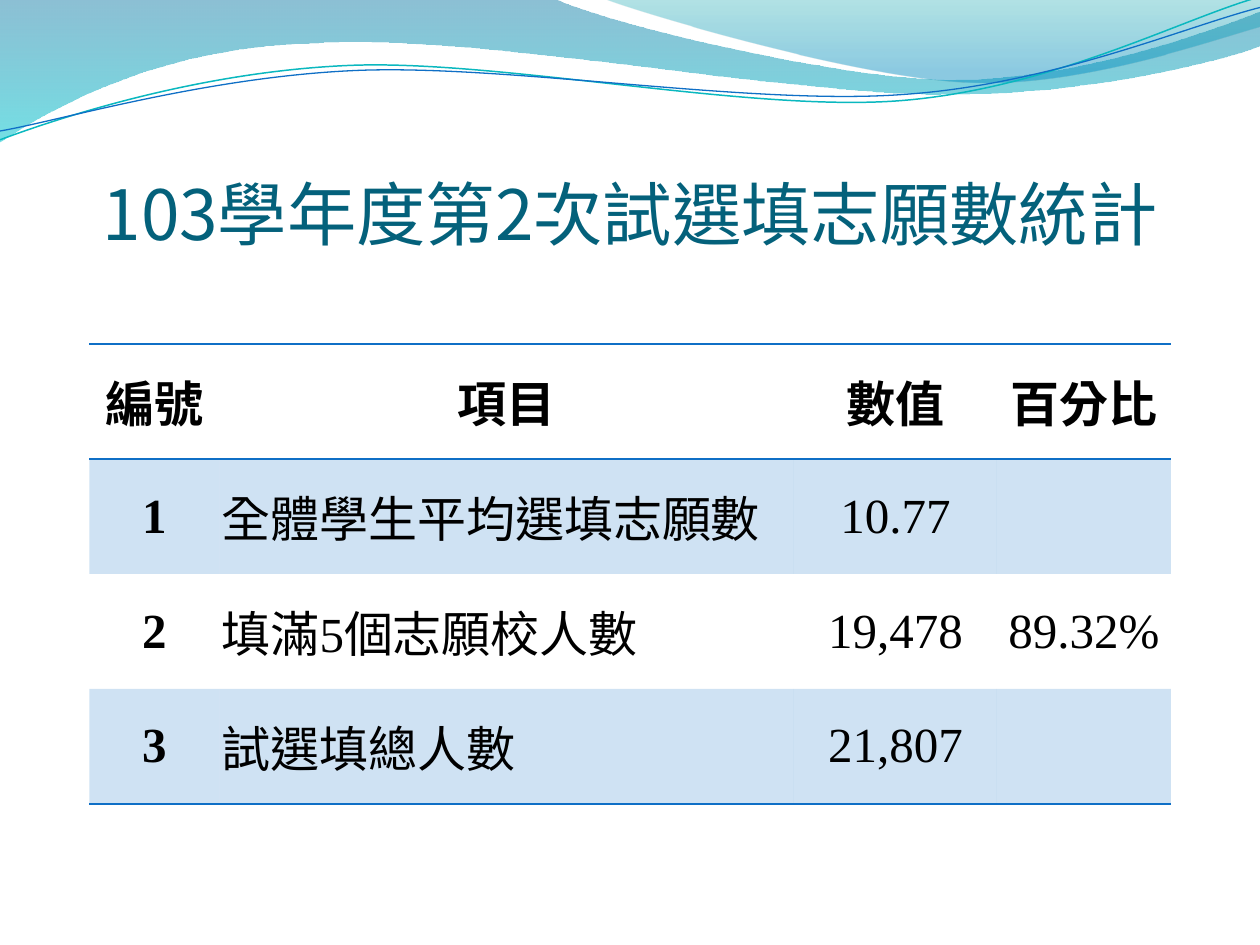
from math import cos, radians, sin

from pptx import Presentation
from pptx.dml.color import RGBColor
from pptx.enum.text import MSO_ANCHOR as Anchor, PP_ALIGN as Align
from pptx.oxml.ns import qn
from pptx.oxml.xmlchemy import OxmlElement as Element
from pptx.util import Pt

CJK = "Noto Sans CJK SC"
SERIF = "Times New Roman"
BLUE = "0F6FC6"
NO_STYLE = "{2D5ABB26-0587-4C30-8999-92F81FD0307C}"
STRAND_TILT = 357.3

ROWS = [
    ("編號", "項目", "數值", "百分比"),
    ("1", "全體學生平均選填志願數", "10.77", ""),
    ("2", "填滿5個志願校人數", "19,478", "89.32%"),
    ("3", "試選填總人數", "21,807", ""),
]
COLUMN_WIDTHS = (74.2, 328.4, 116, 99.4)

BAND = [
    (0, 0), (316.8, -0.7),
    (342.7, 12.2, 478.1, 45.4, 545.8, 45.4),
    (614.2, 45.4, 689.8, 18.7, 720, 6.5),
    (720.7, 25.9),
    (707.8, 31.7, 626.4, 54.7, 537.1, 54),
    (447.8, 54, 275, 20.2, 185, 24.5),
    (92.9, 25.9, 33.1, 59.8, -0.7, 81.4),
    (0, 0),
]
CREST = [
    (344.9, -0.7),
    (366.5, 7.9, 491, 44.6, 553.7, 46.8),
    (616.3, 49.7, 691.9, 23, 720, 15.1),
    (720, 0), (344.9, -0.7),
]
TEAL_LINE = [
    (0, 79.9),
    (34.6, 67, 113.8, 41, 199.4, 37.4),
    (284.4, 33.8, 427, 64.1, 513.4, 57.6),
    (599.8, 51.1, 675.4, 10.8, 718.6, -1.4),
]
BLUE_LINE = [
    (0, 74.9),
    (33.8, 69.1, 118.1, 43.9, 203.8, 40.3),
    (290.2, 36.7, 429.8, 60.5, 516.2, 54),
    (601.9, 48.2, 677.5, 15.1, 720, 4.3),
]


def rgb(value):
    return RGBColor.from_string(value)


def set_format(target, values):
    for key, value in values.items():
        setattr(target, key, value)


def set_alpha(fill_element, percent):
    for color in fill_element.iter(qn("a:srgbClr")):
        alpha = Element("a:alpha")
        alpha.set("val", str(percent * 1000))
        color.append(alpha)


def to_local(box, tilt, x, y):
    left, top, width, height = box
    dx, dy = x - left - width / 2, y - top - height / 2
    angle = radians(-tilt)
    return (Pt(width / 2 + dx * cos(angle) - dy * sin(angle)),
            Pt(height / 2 + dx * sin(angle) + dy * cos(angle)))


def add_outline(slide, box, segments, close, tilt=0):
    left, top, width, height = map(Pt, box)
    builder = slide.shapes.build_freeform(left, top)
    builder.add_line_segments([(left + width, top + height)], close=close)
    outline = builder.convert_to_shape()
    outline.shadow.inherit = False
    outline.rotation = tilt
    track = next(outline.element.iter(qn("a:path")))
    for step in list(track):
        if step.tag != qn("a:close"):
            track.remove(step)
    for index, segment in enumerate(segments):
        kind = "moveTo" if index == 0 else "lnTo" if len(segment) == 2 else "cubicBezTo"
        step = Element(f"a:{kind}")
        for x, y in zip(segment[::2], segment[1::2]):
            point = Element("a:pt")
            for axis, value in zip("xy", to_local(box, tilt, x, y)):
                point.set(axis, str(value))
            step.append(point)
        track.insert(index, step)
    return outline


def add_wave(slide, box, segments, stops):
    wave = add_outline(slide, box, segments, True)
    wave.line.fill.background()
    wave.fill.gradient()
    wave.fill.gradient_angle = 270
    stop_elements = wave.element.spPr.iter(qn("a:gs"))
    for stop, element, (position, color, opacity) in zip(
            wave.fill.gradient_stops, stop_elements, stops):
        stop.position = position
        stop.color.rgb = rgb(color)
        set_alpha(element, opacity)


def add_strand(slide, box, segments, color, width):
    strand = add_outline(slide, box, segments, False, STRAND_TILT)
    strand.fill.background()
    strand.line.color.rgb = rgb(color)
    strand.line.width = Pt(width)


def add_wave_header(slide, box):
    left, top, width, height = box
    add_wave(slide, box, BAND, [(0, "0074A1", 45), (1, "00C6CF", 55)])
    add_wave(slide, (left + 345.6, top, 375.1, 50.4), CREST,
             [(0, "00A1A9", 30), (0.8, "008BBF", 45)])
    add_strand(slide, (left - 0.7, top + 16.5, width, 51.1), TEAL_LINE, "0AB8BF", 0.85)
    add_strand(slide, (left - 0.7, top + 22.3, width, 41.8), BLUE_LINE, BLUE, 0.75)


def write(paragraph, wording, align, color, font_values):
    paragraph.alignment = align
    run = paragraph.add_run()
    run.text = wording
    set_format(run.font, font_values)
    run.font.color.rgb = rgb(color)
    properties = run.font._element
    properties.set("lang", "zh-TW")
    east_asian = Element("a:ea")
    east_asian.set("typeface", CJK)
    properties.find(qn("a:latin")).addnext(east_asian)


def add_title(slide, box):
    title = slide.shapes.add_textbox(*map(Pt, box))
    set_format(title.text_frame, {
        "word_wrap": True, "vertical_anchor": Anchor.BOTTOM,
        "margin_left": 0, "margin_right": 0, "margin_top": Pt(3.6), "margin_bottom": 0})
    write(title.text_frame.paragraphs[0], "103學年度第2次試選填志願數統計",
          Align.CENTER, "04617B", {"size": Pt(39.6), "name": CJK})


def add_border(cell, side):
    border = Element(f"a:{side}")
    border.set("w", str(Pt(1)))
    solid = Element("a:solidFill")
    color = Element("a:srgbClr")
    color.set("val", BLUE)
    solid.append(color)
    border.append(solid)
    cell._tc.get_or_add_tcPr().insert(0, border)


def format_cell(cell, row, column):
    set_format(cell, {
        "vertical_anchor": Anchor.MIDDLE, "margin_left": Pt(1.4),
        "margin_right": Pt(1.4), "margin_top": 0, "margin_bottom": 0})
    if row % 2:
        cell.fill.solid()
        cell.fill.fore_color.rgb = rgb(BLUE)
        set_alpha(cell._tc.tcPr, 20)
    else:
        cell.fill.background()
    if row in (0, len(ROWS) - 1):
        add_border(cell, "lnB")
    if row == 0:
        add_border(cell, "lnT")
    if ROWS[row][column]:
        align = Align.JUSTIFY if row and column == 1 else Align.CENTER
        write(cell.text_frame.paragraphs[0], ROWS[row][column], align, "000000", {
            "size": Pt(28), "name": SERIF if row else CJK,
            "bold": row == 0 or column == 0})


def add_statistics(slide, box):
    statistics = slide.shapes.add_table(
        len(ROWS), len(COLUMN_WIDTHS), *map(Pt, box)).table
    statistics._tbl.tblPr.find(qn("a:tableStyleId")).text = NO_STYLE
    statistics.horz_banding = False
    for column, width in zip(statistics.columns, COLUMN_WIDTHS):
        column.width = Pt(width)
    for row_index, row in enumerate(statistics.rows):
        row.height = Pt(box[3] / len(ROWS))
        for column_index, cell in enumerate(row.cells):
            format_cell(cell, row_index, column_index)


def main():
    presentation = Presentation()
    set_format(presentation, {"slide_width": Pt(720), "slide_height": Pt(540)})
    slide = presentation.slides.add_slide(presentation.slide_layouts[6])
    add_wave_header(slide, (-0.7, -0.7, 721.4, 82.1))
    add_title(slide, (36, 55.4, 648, 90))
    add_statistics(slide, (51.1, 196.6, 618, 262.8))
    presentation.save("out.pptx")


if __name__ == "__main__":
    main()
